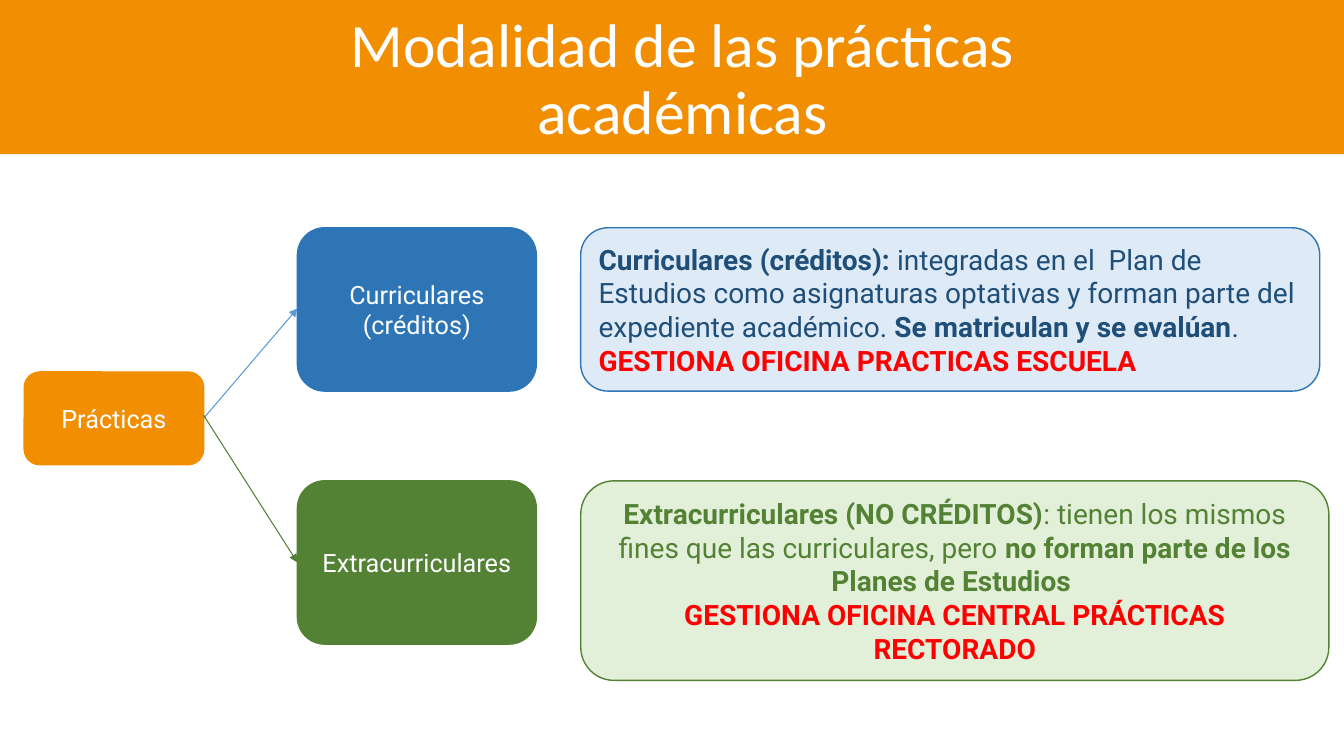
from lxml import etree
from pptx import Presentation
from pptx.dml.color import RGBColor
from pptx.enum import shapes, text
from pptx.oxml import ns
from pptx.util import Inches, Pt

COLORS = {
    "orange": "F18E01", "white": "FFFFFF", "red": "FF0000",
    "blue": "2E75B6", "pale_blue": "DEEBF7", "navy": "1F4E79", "sky": "5B9BD5",
    "green": "548235", "pale_green": "E2F0D9", "arrow_green": "537F34",
}
LEFT, CENTER = text.PP_ALIGN.LEFT, text.PP_ALIGN.CENTER


def rgb(name):
    return RGBColor.from_string(COLORS[name])


def add_box(box, fill, line, size, align, paragraphs):
    shape = slide.shapes.add_shape(
        shapes.MSO_SHAPE.ROUNDED_RECTANGLE, *[Inches(value) for value in box])
    shape.shadow.inherit = False
    shape.fill.solid()
    shape.fill.fore_color.rgb = rgb(fill)
    shape.line.color.rgb = rgb(line)
    shape.line.width = Pt(1)
    frame = shape.text_frame
    frame.word_wrap = True
    frame.vertical_anchor = text.MSO_ANCHOR.MIDDLE
    for index, runs in enumerate(paragraphs):
        paragraph = frame.add_paragraph() if index else frame.paragraphs[0]
        paragraph.alignment = align
        paragraph.font.name = "Roboto"
        paragraph.font.size = Pt(size)
        for words, bold, color in runs:
            run = paragraph.add_run()
            run.text = words
            run.font.bold = bold
            run.font.color.rgb = rgb(color)


presentation = Presentation()
presentation.slide_width = Inches(13.33)
presentation.slide_height = Inches(7.5)
slide = presentation.slides.add_slide(presentation.slide_layouts[6])

band = slide.shapes.add_shape(
    shapes.MSO_SHAPE.RECTANGLE, 0, 0, presentation.slide_width, Inches(1.53))
band.shadow.inherit = False
band.fill.solid()
band.fill.fore_color.rgb = rgb("orange")
band.line.fill.background()

title = slide.shapes.add_textbox(Inches(3.06), Inches(0.08), Inches(7.42), Inches(1.45))
title.text_frame.word_wrap = True
title.text_frame.vertical_anchor = text.MSO_ANCHOR.MIDDLE
paragraph = title.text_frame.paragraphs[0]
paragraph.text = "Modalidad de las prácticas académicas"
paragraph.alignment = CENTER
paragraph.line_spacing = 0.9
paragraph.font.name = "Calibri"
paragraph.font.size = Pt(44)
paragraph.font.color.rgb = rgb("white")

curricular_text = [[
    ("Curriculares (créditos): ", True, "navy"),
    ("integradas en el  Plan de Estudios como asignaturas optativas "
     "y forman parte del expediente académico. ", False, "navy"),
    ("Se matriculan y se evalúan", True, "navy"),
    (". ", False, "navy"),
    ("GESTIONA OFICINA PRACTICAS ESCUELA", True, "red"),
]]
extracurricular_text = [
    [
        ("Extracurriculares (NO CRÉDITOS)", True, "green"),
        (": tienen los mismos fines que las curriculares, pero ", False, "green"),
        ("no forman parte de los Planes de Estudios ", True, "green"),
    ],
    [("GESTIONA OFICINA CENTRAL PRÁCTICAS RECTORADO", True, "red")],
]
add_box((5.76, 2.26, 7.33, 1.62), "pale_blue", "blue", 20, LEFT, curricular_text)
add_box((5.76, 4.77, 7.42, 1.98), "pale_green", "green", 20, CENTER, extracurricular_text)

for box, color, label in [
    ((0.24, 3.69, 1.78, 0.92), "orange", "Prácticas"),
    ((2.95, 2.26, 2.37, 1.62), "blue", "Curriculares (créditos)"),
    ((2.95, 4.77, 2.37, 1.62), "green", "Extracurriculares"),
]:
    add_box(box, color, color, 18, CENTER, [[(label, False, "white")]])

for start_y, end_y, color in [(4.15, 3.06, "sky"), (4.12, 5.58, "arrow_green")]:
    arrow = slide.shapes.add_connector(
        shapes.MSO_CONNECTOR.STRAIGHT,
        Inches(2.02), Inches(start_y), Inches(2.95), Inches(end_y))
    arrow.line.color.rgb = rgb(color)
    arrow.line.width = Pt(0.75)
    etree.SubElement(arrow.line._get_or_add_ln(), ns.qn("a:tailEnd"), type="triangle")
    etree.SubElement(arrow._element.spPr, ns.qn("a:effectLst"))

presentation.save("out.pptx")
